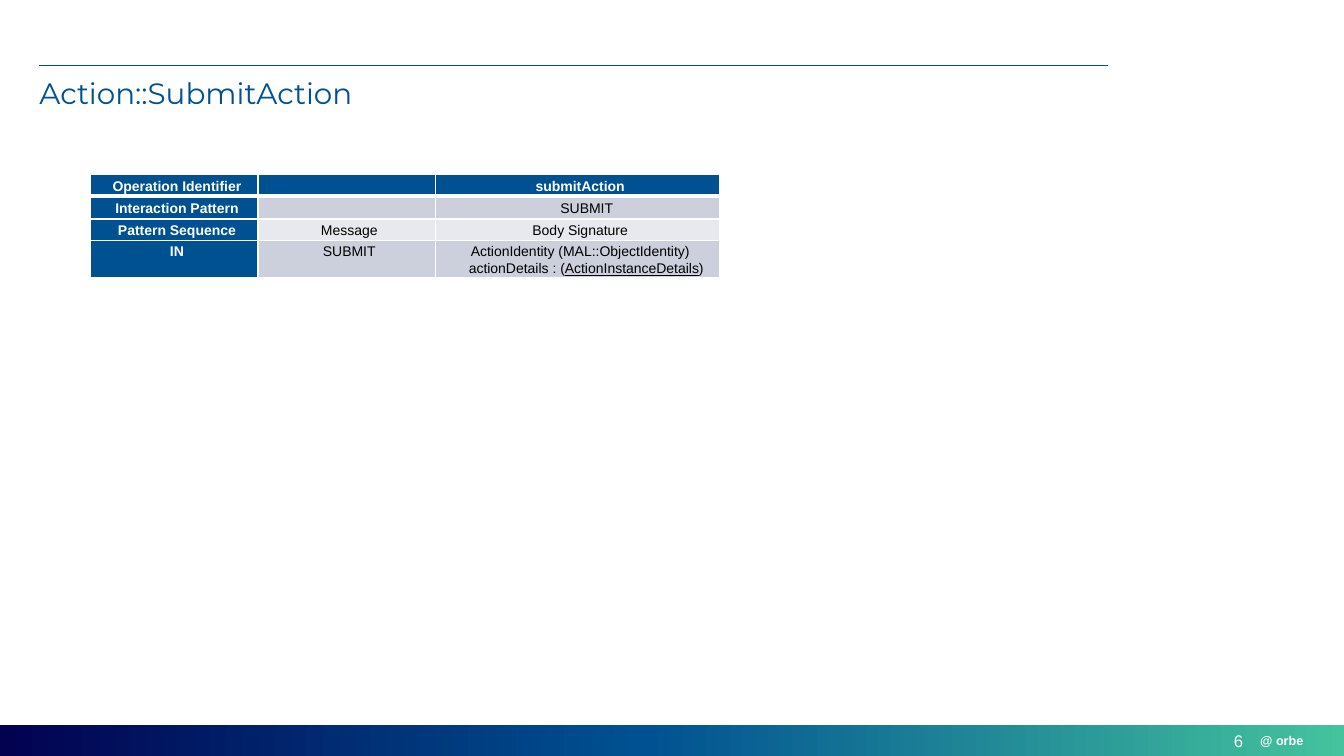
from lxml import etree
from pptx import Presentation
from pptx import util as u
from pptx.dml.color import RGBColor
from pptx.enum import shapes, text
from pptx.oxml import ns

COLORS = {"navy": "020251", "blue": "005191", "green": "44C39D", "white": "FFFFFF",
          "black": "000000", "band": "CCD0DC", "light": "E7E9EE"}
LEFT, CENTER, RIGHT = text.PP_ALIGN.LEFT, text.PP_ALIGN.CENTER, text.PP_ALIGN.RIGHT
TOP, MIDDLE = text.MSO_ANCHOR.TOP, text.MSO_ANCHOR.MIDDLE


def rgb(name):
    return RGBColor.from_string(COLORS[name])


def add_color(parent, name):
    etree.SubElement(parent, ns.qn("a:srgbClr"), val=COLORS[name])


class SlideBuilder:
    """Places elements on a grid of 100 columns by 100 rows."""

    def __init__(self, deck):
        self.column = deck.slide_width / 100
        self.row = deck.slide_height / 100
        self.slide = deck.slides.add_slide(deck.slide_layouts[5])

    def area(self, left, top, width, height):
        return (round(left * self.column), round(top * self.row),
                round(width * self.column), round(height * self.row))

    def add_span(self, para, content, color, size, font="Arial", underline=None, **style):
        span = para.add_run()
        span.text = content
        values = {"name": font, "size": u.Pt(size), "underline": underline, **style}
        for key, value in values.items():
            setattr(span.font, key, value)
        span.font.color.rgb = rgb(color)

    def format_frame(self, frame, **values):
        margins = dict.fromkeys(("margin_left", "margin_top", "margin_right", "margin_bottom"), 0)
        for key, value in {**margins, "auto_size": text.MSO_AUTO_SIZE.NONE, **values}.items():
            setattr(frame, key, value)

    def title(self, content, place):
        box = self.slide.shapes.title
        box.left, box.top, box.width, box.height = self.area(*place)
        self.format_frame(box.text_frame, vertical_anchor=TOP, word_wrap=True)
        para = box.text_frame.paragraphs[0]
        para.alignment, para.line_spacing = LEFT, 0.9
        self.add_span(para, content, "blue", 21, "Montserrat")

    def label(self, content, place, size, align=LEFT, **style):
        box = self.slide.shapes.add_textbox(*self.area(*place))
        self.format_frame(box.text_frame, vertical_anchor=MIDDLE, word_wrap=False)
        para = box.text_frame.paragraphs[0]
        para.alignment = align
        self.add_span(para, content, "white", size, **style)

    def gradient_bar(self, place, stops):
        bar = self.slide.shapes.add_shape(shapes.MSO_SHAPE.RECTANGLE, *self.area(*place))
        bar.shadow.inherit = False
        bar.line.fill.background()
        bar.fill.gradient()
        bar.fill.gradient_angle = 0
        stop_list = bar._element.spPr.find(".//" + ns.qn("a:gsLst"))
        for stop in list(stop_list):
            stop_list.remove(stop)
        for percent, name in stops:
            add_color(etree.SubElement(stop_list, ns.qn("a:gs"), pos=str(percent * 1000)), name)

    def rule(self, left, right, top):
        x, y, width, _ = self.area(left, top, right - left, 0)
        line = self.slide.shapes.add_connector(shapes.MSO_CONNECTOR.STRAIGHT, x, y, x + width, y)
        line.line.color.rgb = rgb("blue")
        line.line.width = u.Pt(1)
        etree.SubElement(line._element.spPr, ns.qn("a:effectLst"))

    def borders(self, cell, widths):
        properties = cell._tc.get_or_add_tcPr()
        for side, points in widths.items():
            edge = etree.SubElement(properties, ns.qn("a:ln" + side), w=str(u.Pt(points)))
            add_color(etree.SubElement(edge, ns.qn("a:solidFill")), "white")

    def fill_cell(self, cell, lines, fill, color, bold):
        cell.fill.solid()
        cell.fill.fore_color.rgb = rgb(fill)
        margins = {"margin_left": 0.13, "margin_top": 0.03, "margin_right": 0.08, "margin_bottom": 0}
        for key, inches in margins.items():
            setattr(cell, key, u.Inches(inches))
        frame = cell.text_frame
        for index, (indent, spans) in enumerate(lines):
            para = frame.add_paragraph() if index else frame.paragraphs[0]
            para.alignment, para.line_spacing = CENTER, 1.07
            layout = para._p.get_or_add_pPr()
            layout.set("marL", str(u.Inches(indent)))
            layout.set("indent", str(u.Inches(-0.01)))
            for content, underline in spans:
                self.add_span(para, content, color, 10, bold=bold, underline=underline)
        if not lines:
            etree.SubElement(frame.paragraphs[0]._p, ns.qn("a:endParaRPr"), sz="1000")

    def table(self, left, top, columns, rows, cells):
        place = self.area(left, top, sum(columns), sum(rows))
        table = self.slide.shapes.add_table(len(rows), len(columns), *place).table
        for item, width in zip(table.columns, columns):
            item.width = round(width * self.column)
        for r, (height, contents) in enumerate(zip(rows, cells)):
            table.rows[r].height = round(height * self.row)
            for c, lines in enumerate(contents):
                heading = r == 0 or c == 0
                fill = "blue" if heading else ("band" if r % 2 else "light")
                cell = table.cell(r, c)
                self.borders(cell, {"L": 1, "R": 1, "T": 3 if r == 1 else 1, "B": 1 if r else 3})
                self.fill_cell(cell, lines, fill, "white" if heading else "black", heading)


def plain(content, indent=0.01):
    return [(indent, [(content, None)])]


def main():
    deck = Presentation()
    deck.slide_width, deck.slide_height = u.Inches(13.33), u.Inches(7.5)
    page = SlideBuilder(deck)

    # Frame of the page
    page.gradient_bar((0, 95.87, 100, 4.13), [(0, "navy"), (48, "blue"), (100, "green")])
    page.rule(2.93, 82.45, 8.67)
    page.label("@ orbe", (93.77, 96.93, 3.38, 2), 9, bold=True)
    page.title("Action::SubmitAction", (2.93, 10.4, 94.15, 4.27))

    # Operation table
    signature = plain("ActionIdentity (MAL::ObjectIdentity)") + [
        (0.13, [("actionDetails : (", None), ("ActionInstanceDetails", True), (")", None)])]
    page.table(6.75, 23.07, [12.45, 13.2, 21.16], [2.9, 3, 2.8, 4.9], [
        [plain("Operation Identifier"), [], plain("submitAction")],
        [plain("Interaction Pattern"), [], plain("SUBMIT", 0.14)],
        [plain("Pattern Sequence"), plain("Message"), plain("Body Signature")],
        [plain("IN"), plain("SUBMIT"), signature],
    ])

    # Page number
    page.label("6", (90.55, 96.67, 1.95, 2.67), 12, RIGHT)
    deck.save("out.pptx")


if __name__ == "__main__":
    main()
